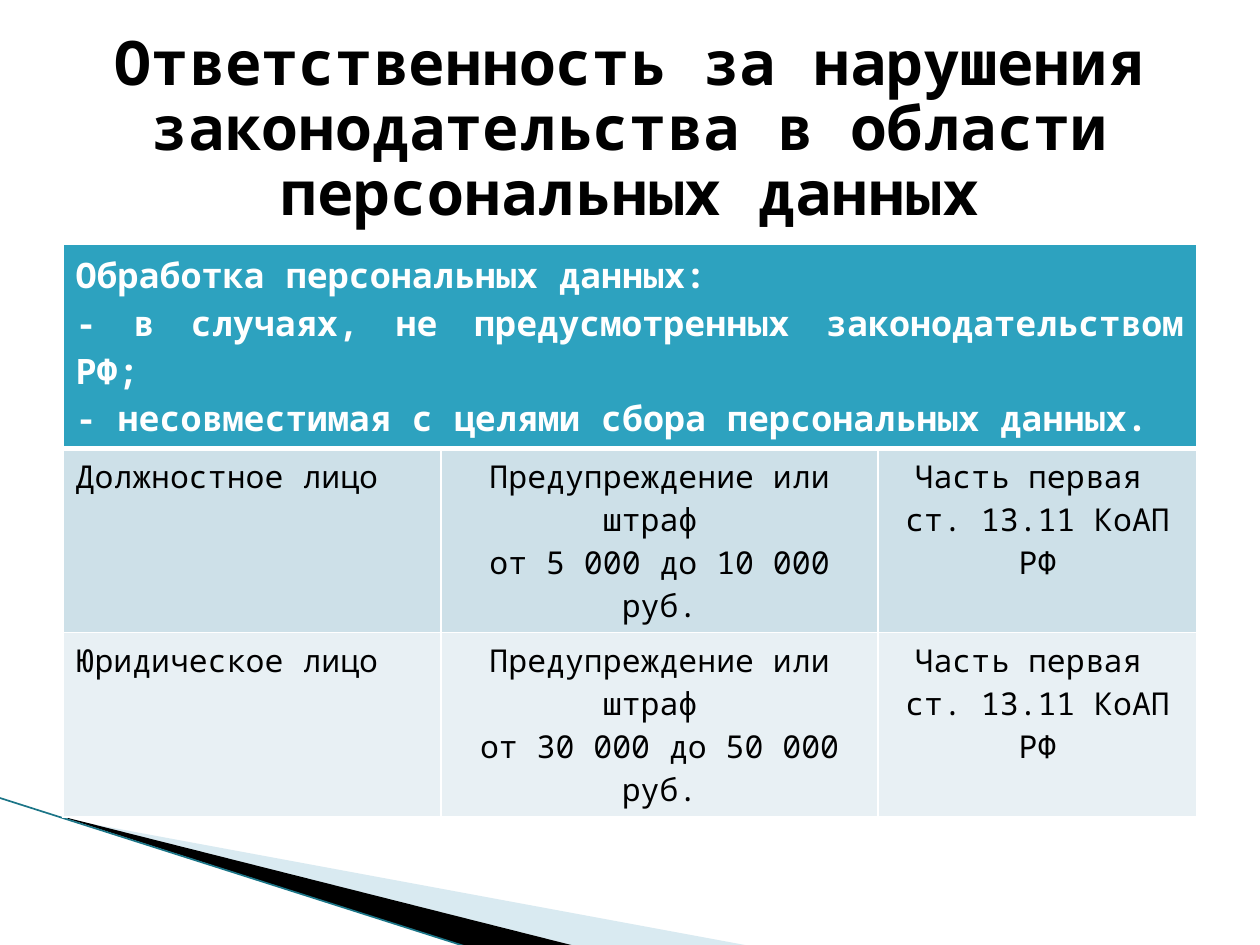
from lxml import etree
from pptx import Presentation
from pptx.dml.color import RGBColor
from pptx.enum.shapes import MSO_CONNECTOR
from pptx.enum.text import MSO_ANCHOR, MSO_AUTO_SIZE, PP_ALIGN
from pptx.oxml.ns import qn
from pptx.util import Pt

LEFT, MID, JUST = PP_ALIGN.LEFT, PP_ALIGN.CENTER, PP_ALIGN.JUSTIFY
MIDDLE = MSO_ANCHOR.MIDDLE
NOFIT = MSO_AUTO_SIZE.NONE
LINE = MSO_CONNECTOR.STRAIGHT
WHITE = RGBColor(0xFF, 0xFF, 0xFF)
BLACK = RGBColor(0, 0, 0)
TEAL = RGBColor(0x2D, 0xA2, 0xBF)
DARK = RGBColor(0x1B, 0x75, 0x87)
PALE = RGBColor(0xA0, 0xCB, 0xDC)
BLUE = RGBColor(0xCD, 0xE0, 0xE8)
MIST = RGBColor(0xE8, 0xF0, 0xF4)
FONT = "Noto Sans Mono"


def write(frame, lines, size, color, bold, align):
    for i, line in enumerate(lines):
        para = frame.paragraphs[0] if i == 0 else frame.add_paragraph()
        para.alignment = align
        run = para.add_run()
        run.text = line
        font = run.font
        font.name, font.size, font.bold = FONT, Pt(size), bold
        font.color.rgb = color


def edge(cell, side, width):
    props = cell._tc.get_or_add_tcPr()
    line = etree.SubElement(props, qn("a:ln" + side), w=str(Pt(width)))
    fill = etree.SubElement(line, qn("a:solidFill"))
    etree.SubElement(fill, qn("a:srgbClr"), val=str(WHITE))


deck = Presentation()
deck.slide_width, deck.slide_height = Pt(720), Pt(540)
slide = deck.slides.add_slide(deck.slide_layouts[5])
shapes = slide.shapes

wedges = [
    (PALE, [(39.6, 468.5), (428.4, 540.5), (328.3, 540.5), (39.6, 468)]),
    (BLACK, [(38.2, 467.3), (329, 540.7), (267.8, 541.4), (38.9, 468)]),
]
for color, points in wedges:
    spots = [(Pt(x), Pt(y)) for x, y in points]
    path = shapes.build_freeform(*spots[0])
    path.add_line_segments(spots[1:])
    wedge = path.convert_to_shape()
    wedge.shadow.inherit = False
    wedge.line.fill.background()
    wedge.fill.solid()
    wedge.fill.fore_color.rgb = color
    if color == PALE:
        tint = wedge._element.spPr.find(".//" + qn("a:srgbClr"))
        etree.SubElement(tint, qn("a:alpha"), val="40000")

rule = shapes.add_connector(LINE, Pt(-0.7), Pt(455.8), Pt(267.8), Pt(541.4))
rule.line.color.rgb = DARK
rule.line.width = Pt(0.95)
etree.SubElement(rule._element.spPr, qn("a:effectLst"))

title = shapes.title
title.left, title.top, title.width, title.height = Pt(36), Pt(21.6), Pt(648), Pt(106.6)
frame = title.text_frame
frame.word_wrap = True
frame.auto_size = NOFIT
frame.vertical_anchor = MIDDLE
write(frame, ["Ответственность за нарушения законодательства в области персональных данных"],
      35, BLACK, True, MID)
frame.paragraphs[0].line_spacing = 0.88

head = [
    "Обработка персональных данных:",
    "- в случаях, не предусмотренных законодательством РФ;",
    "- несовместимая с целями сбора персональных данных.",
]
fines = [
    ("Должностное лицо", "от 5 000 до 10 000 руб."),
    ("Юридическое лицо", "от 30 000 до 50 000 руб."),
]
law = ["Часть первая ", "ст. 13.11 КоАП РФ"]

table = shapes.add_table(3, 3, Pt(36), Pt(139.7), Pt(648), Pt(306)).table
for col, width in zip(table.columns, (216, 249.8, 182.2)):
    col.width = Pt(width)
for row, height in zip(table.rows, (113, 103, 90)):
    row.height = Pt(height)

for r, color in enumerate((TEAL, BLUE, MIST)):
    for cell in table.rows[r].cells:
        edge(cell, "L", 1)
        edge(cell, "R", 1)
        edge(cell, "T", 3 if r == 1 else 1)
        edge(cell, "B", 3 if r == 0 else 1)
        cell.fill.solid()
        cell.fill.fore_color.rgb = color

table.cell(0, 0).merge(table.cell(0, 2))
write(table.cell(0, 0).text_frame, head, 20, WHITE, True, JUST)
for r, (who, fine) in enumerate(fines, 1):
    texts = [[who], ["Предупреждение или штраф ", fine], law]
    for c, lines in enumerate(texts):
        write(table.cell(r, c).text_frame, lines, 18, BLACK, False, MID if c else LEFT)

deck.save("out.pptx")
